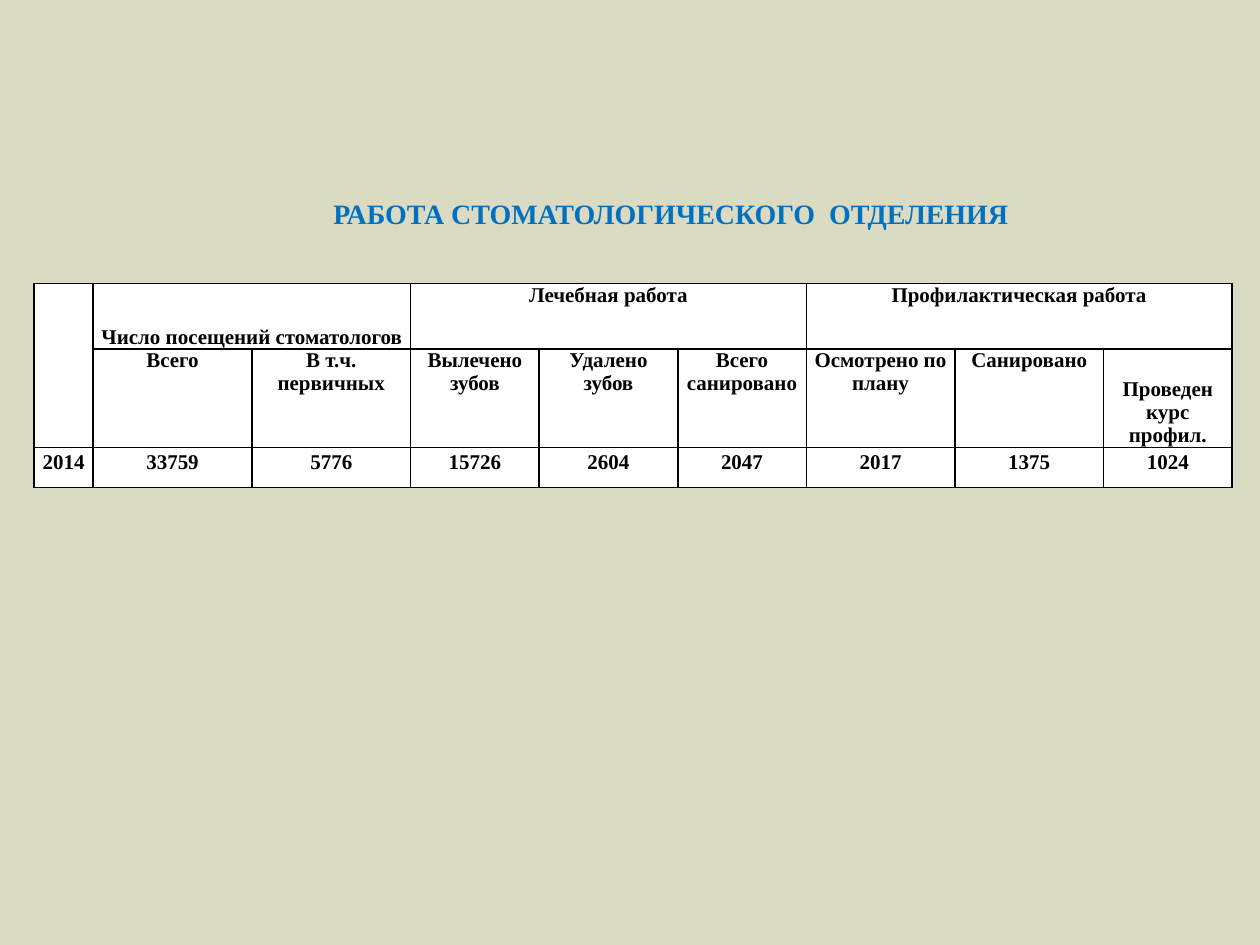
from lxml import etree
from pptx import Presentation
from pptx import util as u
from pptx.dml.color import RGBColor
from pptx.enum import text
from pptx.oxml import ns

BACKGROUND = RGBColor(0xDB, 0xDA, 0xC2)
TITLE_BLUE = RGBColor(0x00, 0x70, 0xC0)
BLACK = RGBColor(0, 0, 0)
WHITE = RGBColor(0xFF, 0xFF, 0xFF)
FONT = "Times New Roman"

COLUMNS = [0.47, 1.26, 1.26, 1.02, 1.1, 1.02, 1.18, 1.18, 1.02]
ROWS = [0.52, 0.78, 0.32]
GROUPS = [
    (1, 2, "Число посещений стоматологов"),
    (3, 5, "Лечебная работа"),
    (6, 8, "Профилактическая работа"),
]
HEADINGS = ["Всего", "В т.ч.\nпервичных", "Вылечено\nзубов", "Удалено\nзубов",
            "Всего\nсанировано", "Осмотрено по плану", "Санировано",
            "Проведен\nкурс\nпрофил."]
VALUES = ["2014", "33759", "5776", "15726", "2604", "2047", "2017", "1375", "1024"]
BOTTOM_CELLS = [(0, 1), (1, 8)]


def write(frame, words, size=12, color=BLACK, spacing=None):
    frame.text = words
    for para in frame.paragraphs:
        para.alignment = text.PP_ALIGN.CENTER
        if spacing:
            para.line_spacing = spacing
        for span in para.runs:
            span.font.name = FONT
            span.font.size = u.Pt(size)
            span.font.bold = True
            span.font.color.rgb = color


deck = Presentation()
deck.slide_width, deck.slide_height = u.Inches(10), u.Inches(7.5)
page = deck.slides.add_slide(deck.slide_layouts[5])
page.background.fill.solid()
page.background.fill.fore_color.rgb = BACKGROUND

title = page.shapes.title
title.left, title.top = u.Inches(1.92), u.Inches(1.51)
title.width, title.height = u.Inches(6.22), u.Inches(0.37)
frame = title.text_frame
write(frame, "РАБОТА СТОМАТОЛОГИЧЕСКОГО  ОТДЕЛЕНИЯ", size=16, color=TITLE_BLUE)
frame.word_wrap = False
frame.auto_size = text.MSO_AUTO_SIZE.SHAPE_TO_FIT_TEXT
frame.vertical_anchor = text.MSO_ANCHOR.MIDDLE
frame.paragraphs[0]._p.get_or_add_pPr().set("indent", str(u.Inches(0.59)))

table = page.shapes.add_table(
    len(ROWS), len(COLUMNS), u.Inches(0.27), u.Inches(2.25),
    u.Inches(sum(COLUMNS)), u.Inches(sum(ROWS))).table
table.first_row = table.horz_banding = False
for column, width in zip(table.columns, COLUMNS):
    column.width = u.Inches(width)
for row, height in zip(table.rows, ROWS):
    row.height = u.Inches(height)

for cell in table.iter_cells():
    cell.margin_left = cell.margin_right = u.Inches(0.01)
    cell.margin_top = cell.margin_bottom = 0
    properties = cell._tc.get_or_add_tcPr()
    for side in ("lnL", "lnR", "lnT", "lnB"):
        border = etree.SubElement(properties, ns.qn(f"a:{side}"), w=str(u.Pt(1)))
        paint = etree.SubElement(border, ns.qn("a:solidFill"))
        etree.SubElement(paint, ns.qn("a:srgbClr"), val=str(BLACK))
    cell.fill.solid()
    cell.fill.fore_color.rgb = WHITE

table.cell(0, 0).merge(table.cell(1, 0))
for first, last, words in GROUPS:
    table.cell(0, first).merge(table.cell(0, last))
    write(table.cell(0, first).text_frame, words)
for index, words in enumerate(HEADINGS, start=1):
    write(table.cell(1, index).text_frame, words)
for index, words in enumerate(VALUES):
    write(table.cell(2, index).text_frame, words, spacing=1.15)
for row, column in BOTTOM_CELLS:
    table.cell(row, column).vertical_anchor = text.MSO_ANCHOR.BOTTOM

deck.save("out.pptx")
